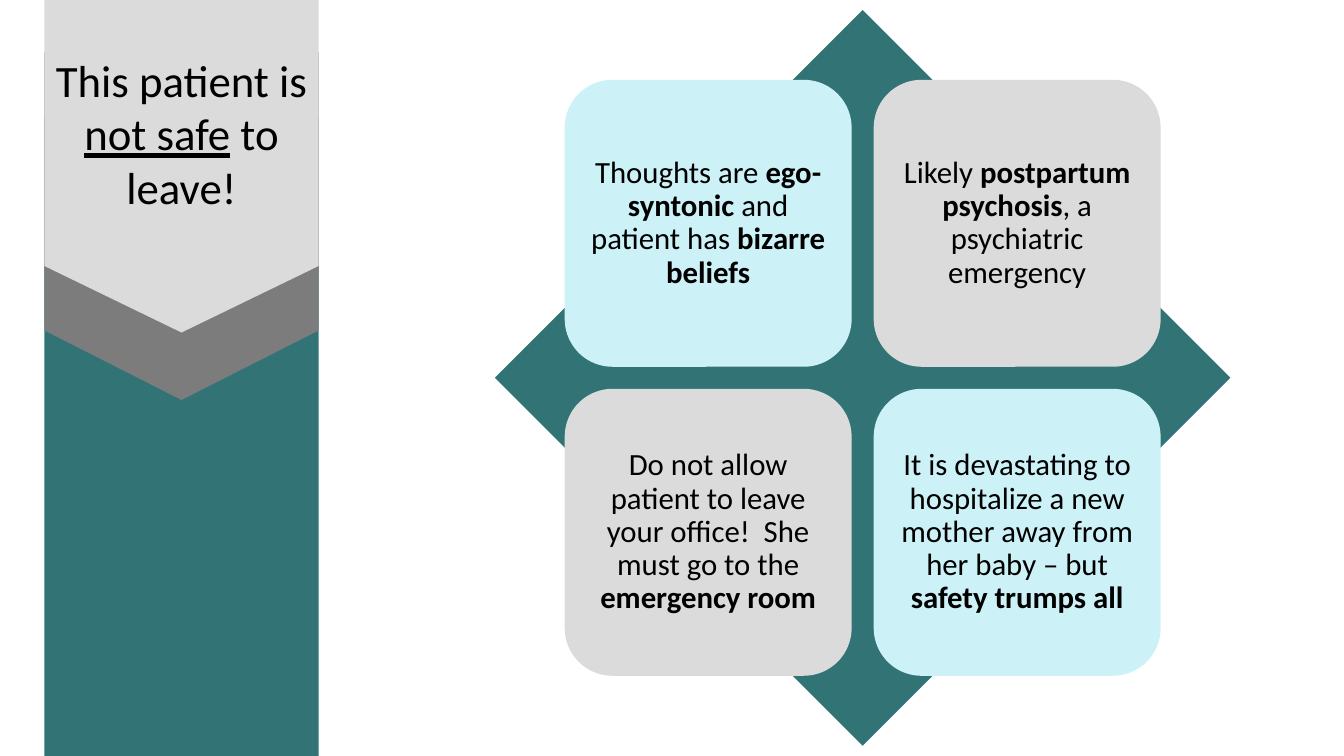
from dataclasses import dataclass
from typing import NamedTuple

from pptx import Presentation
from pptx.dml.color import RGBColor
from pptx.enum.shapes import MSO_SHAPE as Shape
from pptx.enum.text import MSO_ANCHOR as Anchor, PP_ALIGN as Align
from pptx.util import Cm, Pt


@dataclass(frozen=True)
class Theme:
    teal: str = "327476"
    dark_gray: str = "7C7C7C"
    light_gray: str = "DBDBDB"
    pale_blue: str = "CCF2F8"
    text: str = "000000"
    font: str = "Calibri"
    banner_size: int = 32
    card_size: int = 22


class Box(NamedTuple):
    left: float
    top: float
    width: float
    height: float


THEME = Theme()
BOLD = {"bold": True}
UNDERLINE = {"underline": True}

BANNER_TEXT = [("This patient is ", {}), ("not safe", UNDERLINE), (" to leave!", {})]
CARDS = [
    (THEME.pale_blue, [
        ("Thoughts are ", {}),
        ("ego-syntonic", BOLD),
        (" and patient has ", {}),
        ("bizarre beliefs", BOLD),
    ]),
    (THEME.light_gray, [
        ("Likely ", {}),
        ("postpartum psychosis", BOLD),
        (", a psychiatric emergency", {}),
    ]),
    (THEME.light_gray, [
        ("Do not allow patient to leave your office!  She must go to the ", {}),
        ("emergency room", BOLD),
    ]),
    (THEME.pale_blue, [
        ("It is devastating to hospitalize a new mother away from her baby – but ", {}),
        ("safety trumps all", BOLD),
    ]),
]


def set_attributes(target, values):
    for name, value in values.items():
        setattr(target, name, value)


def add_filled_shape(slide, kind, box, color):
    shape = slide.shapes.add_shape(kind, *(Cm(length) for length in box))
    shape.shadow.inherit = False
    shape.fill.solid()
    shape.fill.fore_color.rgb = RGBColor.from_string(color)
    shape.line.fill.background()
    return shape


def write_text(shape, runs, size, frame_format, paragraph_format):
    frame = shape.text_frame
    set_attributes(frame, {"word_wrap": True, "vertical_anchor": Anchor.MIDDLE, **frame_format})
    paragraph = frame.paragraphs[0]
    set_attributes(paragraph, {"alignment": Align.CENTER, **paragraph_format})
    for text, emphasis in runs:
        run = paragraph.add_run()
        run.text = text
        set_attributes(run.font, {"name": THEME.font, "size": Pt(size), **emphasis})
        run.font.color.rgb = RGBColor.from_string(THEME.text)


def add_banner(slide, box):
    layers = [
        (2.95, 20.12, THEME.teal),
        (1.32, 8.76, THEME.dark_gray),
        (0, 8.38, THEME.light_gray),
    ]
    for offset, height, color in layers:
        layer_box = Box(box.left, box.top + offset, box.width, height)
        shape = add_filled_shape(slide, Shape.FLOWCHART_OFFPAGE_CONNECTOR, layer_box, color)
    write_text(shape, BANNER_TEXT, THEME.banner_size, {}, {})


def add_matrix(slide, box):
    add_filled_shape(slide, Shape.DIAMOND, box, THEME.teal)
    side = 0.39 * box.width
    margin = 0.095 * box.width
    pitch = 0.42 * box.width
    inset = Cm(0.23)
    margins = {f"margin_{edge}": inset for edge in ("left", "top", "right", "bottom")}
    for index, (color, runs) in enumerate(CARDS):
        row, column = divmod(index, 2)
        card_box = Box(
            box.left + margin + column * pitch, box.top + margin + row * pitch, side, side
        )
        card = add_filled_shape(slide, Shape.ROUNDED_RECTANGLE, card_box, color)
        write_text(card, runs, THEME.card_size, margins, {"line_spacing": 0.9})


def main():
    presentation = Presentation()
    set_attributes(presentation, {"slide_width": Cm(33.87), "slide_height": Cm(19.05)})
    slide = presentation.slides.add_slide(presentation.slide_layouts[6])
    add_banner(slide, Box(1.12, 0, 6.91, 19.05))
    add_matrix(slide, Box(12.47, 0.25, 18.54, 18.54))
    presentation.save("out.pptx")


if __name__ == "__main__":
    main()
